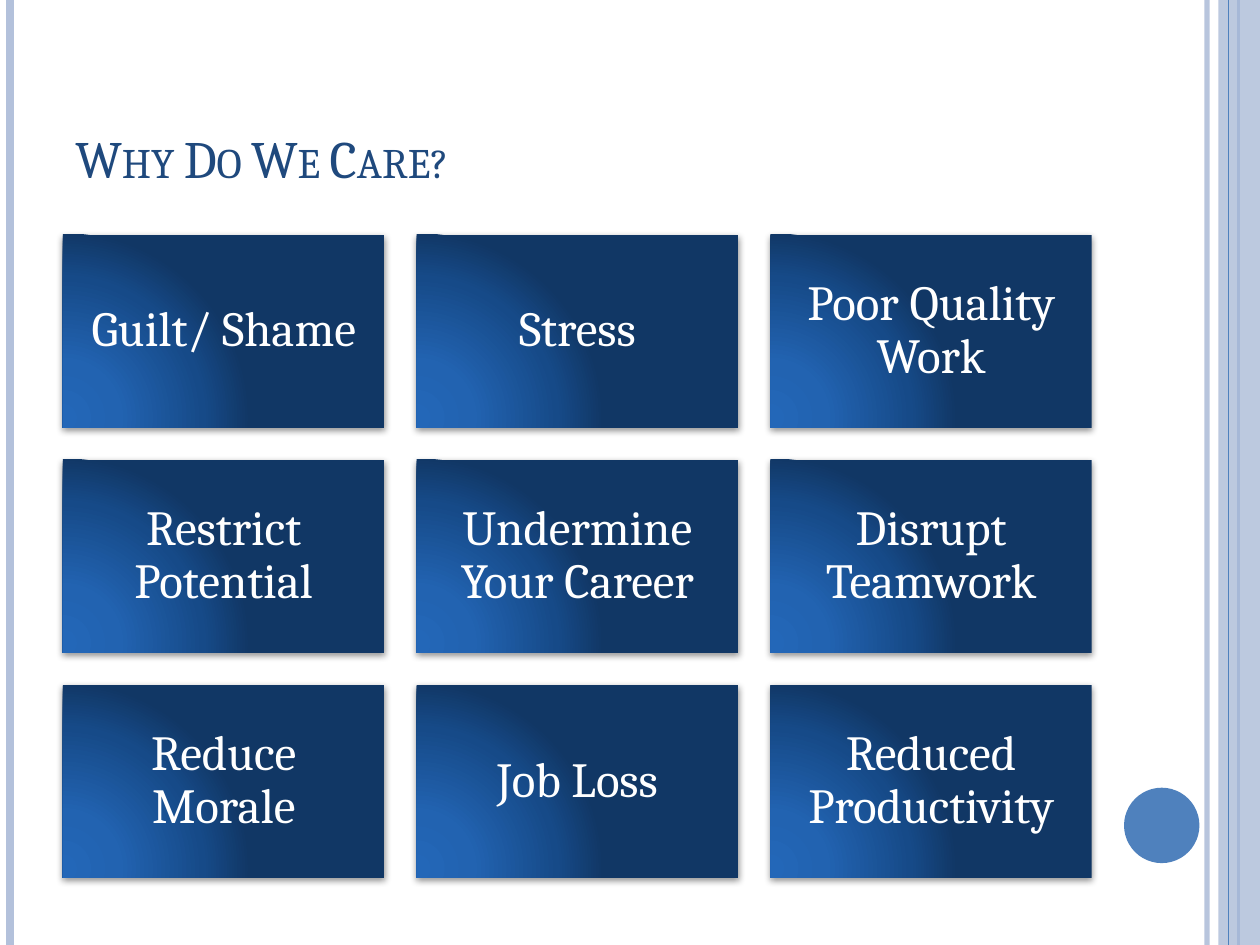
from lxml.etree import SubElement
from pptx import Presentation
from pptx.dml.color import RGBColor
from pptx.enum.shapes import MSO_CONNECTOR, MSO_SHAPE
from pptx.enum.text import MSO_ANCHOR, PP_ALIGN
from pptx.oxml import parse_xml
from pptx.oxml.ns import qn
from pptx.util import Cm, Pt

A_NS = 'xmlns:a="http://schemas.openxmlformats.org/drawingml/2006/main"'


def paint(color_format, hex_color, opacity=100):
    color_format.rgb = RGBColor.from_string(hex_color)
    if opacity < 100:
        for srgb in color_format._xFill.iter(qn("a:srgbClr")):
            SubElement(srgb, qn("a:alpha"), val=str(opacity * 1000))


def add_stripe(x, hex_color, width, opacity=100):
    stripe = slide.shapes.add_connector(
        MSO_CONNECTOR.STRAIGHT, Cm(x), 0, Cm(x), deck.slide_height)
    stripe.line.width = Pt(width)
    stripe.line.fill.solid()
    paint(stripe.line.color, hex_color)
    if opacity < 100:
        for srgb in stripe._element.spPr.iter(qn("a:srgbClr")):
            SubElement(srgb, qn("a:alpha"), val=str(opacity * 1000))
    SubElement(stripe._element.spPr, qn("a:effectLst"))


deck = Presentation()
deck.slide_width, deck.slide_height = Cm(25.4), Cm(19.05)
slide = deck.slides.add_slide(deck.slide_layouts[6])

# Border stripes and right-hand band
add_stripe(24.33, "B3C1DB", 3, opacity=93)
add_stripe(0.2, "B3C1DB", 4.5)
add_stripe(24.97, "4F81BD", 1.5)
band = slide.shapes.add_shape(
    MSO_SHAPE.RECTANGLE, Cm(24.56), 0, Cm(0.84), deck.slide_height)
add_stripe(24.77, "4F81BD", 0.75)

# Corner disc
disc = slide.shapes.add_shape(
    MSO_SHAPE.OVAL, Cm(22.66), Cm(15.88), Cm(1.52), Cm(1.52))
for ornament, hex_color, opacity in ((band, "B3C1DB", 87), (disc, "4F81BD", 100)):
    ornament.fill.solid()
    paint(ornament.fill.fore_color, hex_color, opacity)
    ornament.line.fill.background()
    ornament.shadow.inherit = False

# Title in small capitals
title = slide.shapes.add_textbox(Cm(1.27), Cm(0.76), Cm(20.75), Cm(3.18))
title.text_frame.word_wrap = True
title.text_frame.vertical_anchor = MSO_ANCHOR.BOTTOM
heading = title.text_frame.paragraphs[0]
heading_run = heading.add_run()
heading_run.text = "Why Do We Care?"
heading_run._r.get_or_add_rPr().set("cap", "small")
heading.font.name = "Cambria"
heading.font.size = Pt(30)
paint(heading.font.color, "1F497D")

# Three-by-three grid of consequences
consequences = [
    ["Guilt/ Shame", "Stress", "Poor Quality Work"],
    ["Restrict Potential", "Undermine Your Career", "Disrupt Teamwork"],
    ["Reduce Morale", "Job Loss", "Reduced Productivity"],
]
GRID_LEFT, GRID_TOP = 1.27, 4.73
TILE_WIDTH, TILE_HEIGHT, GAP = 6.48, 3.89, 0.65
stops = "".join(
    f'<a:gs pos="{position * 1000}"><a:srgbClr val="{hex_color}"/></a:gs>'
    for position, hex_color in (
        (0, "2367B8"), (30, "2263B1"), (75, "164A88"), (100, "113765")))
GLOW = f"""<a:gradFill {A_NS} rotWithShape="1"><a:gsLst>{stops}</a:gsLst>
<a:path path="circle"><a:fillToRect l="5000" t="100000" r="120000" b="10000"/>
</a:path></a:gradFill>"""
SHADOW = f"""<a:effectLst {A_NS}>
<a:outerShdw blurRad="50800" dist="20320" dir="5400000" rotWithShape="0">
<a:srgbClr val="000000"><a:alpha val="42000"/></a:srgbClr>
</a:outerShdw></a:effectLst>"""

for row, labels in enumerate(consequences):
    for column, label in enumerate(labels):
        tile = slide.shapes.add_shape(
            MSO_SHAPE.RECTANGLE,
            Cm(GRID_LEFT + column * (TILE_WIDTH + GAP)),
            Cm(GRID_TOP + row * (TILE_HEIGHT + GAP)),
            Cm(TILE_WIDTH), Cm(TILE_HEIGHT))
        tile._element.spPr.append(parse_xml(GLOW))
        tile.line.fill.background()
        tile._element.spPr.append(parse_xml(SHADOW))

        frame = tile.text_frame
        frame.word_wrap = True
        frame.vertical_anchor = MSO_ANCHOR.MIDDLE
        frame.margin_left = frame.margin_right = Cm(0.3)
        frame.margin_top = frame.margin_bottom = Cm(0.3)
        consequence = frame.paragraphs[0]
        consequence.text = label
        consequence.alignment = PP_ALIGN.CENTER
        consequence.line_spacing = 0.9
        consequence.font.name = "Cambria"
        consequence.font.size = Pt(28)
        paint(consequence.font.color, "FFFFFF")

deck.save("out.pptx")
